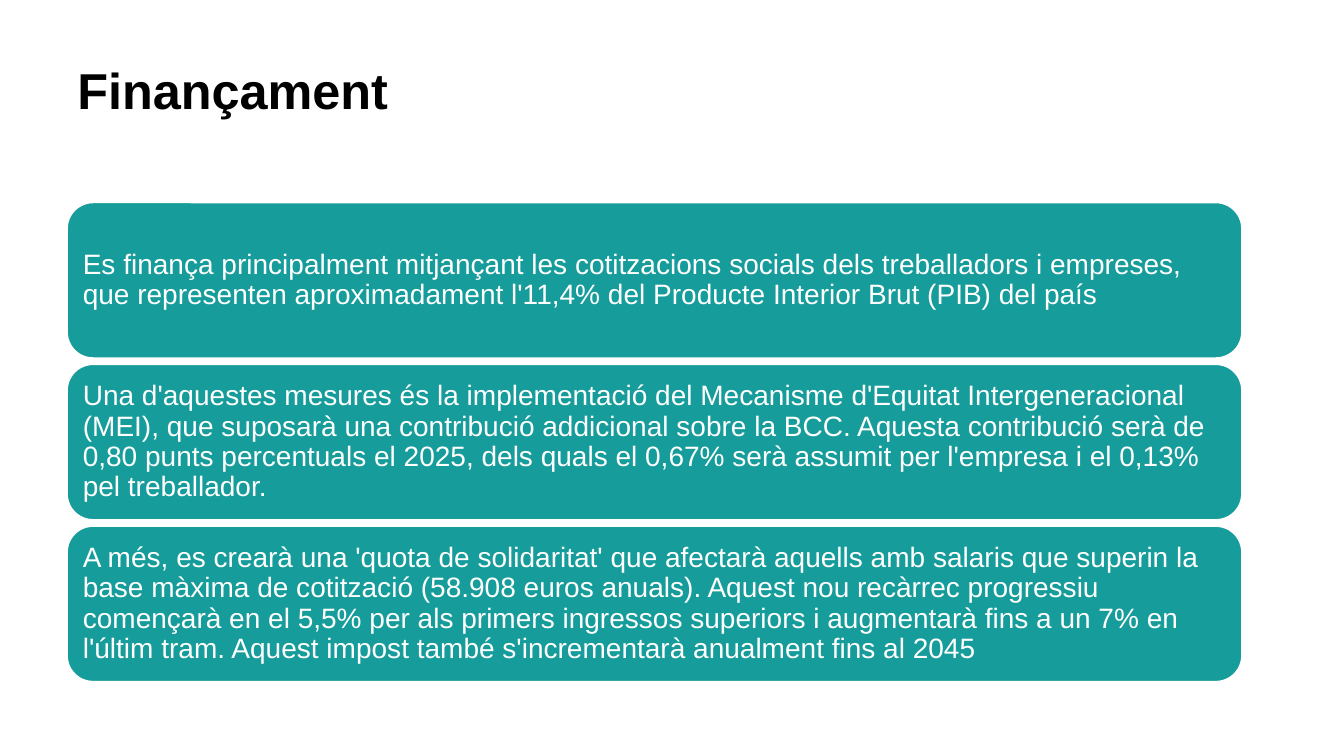
from pptx import Presentation
from pptx.dml.color import RGBColor
from pptx.enum.shapes import MSO_SHAPE
from pptx.enum.text import MSO_ANCHOR, MSO_AUTO_SIZE, PP_ALIGN
from pptx.util import Inches, Pt

TEAL = RGBColor(0x16, 0x9C, 0x9A)
WHITE = RGBColor(0xFF, 0xFF, 0xFF)
BLACK = RGBColor(0x00, 0x00, 0x00)

LEFT, WIDTH = 1, 17.48
TITLE_TOP, TITLE_HEIGHT = 1.6, 3.31
CARD_TOP, CARD_HEIGHT, CARD_PITCH = 5.36, 4.11, 4.28

MEASURES = [
    "Es finança principalment mitjançant les cotitzacions socials dels treballadors i empreses, "
    "que representen aproximadament l'11,4% del Producte Interior Brut (PIB) del país",
    "Una d'aquestes mesures és la implementació del Mecanisme d'Equitat Intergeneracional (MEI), "
    "que suposarà una contribució addicional sobre la BCC. Aquesta contribució serà de 0,80 punts "
    "percentuals el 2025, dels quals el 0,67% serà assumit per l'empresa i el 0,13% pel treballador.",
    "A més, es crearà una 'quota de solidaritat' que afectarà aquells amb salaris que superin la "
    "base màxima de cotització (58.908 euros anuals). Aquest nou recàrrec progressiu començarà en "
    "el 5,5% per als primers ingressos superiors i augmentarà fins a un 7% en l'últim tram. "
    "Aquest impost també s'incrementarà anualment fins al 2045",
]


def apply(target, values):
    for name, value in values.items():
        setattr(target, name, value)


class Deck:
    divisions = 20
    title_font = {"name": "Arial", "size": Pt(36), "bold": True}
    card_font = {"name": "Arial", "size": Pt(20), "bold": False}
    paragraph = {"alignment": PP_ALIGN.LEFT, "line_spacing": 0.9}
    frame = {"word_wrap": True, "auto_size": MSO_AUTO_SIZE.NONE}
    card_insets = {f"margin_{side}": Inches(0.08) for side in ("left", "top", "right", "bottom")}

    def __init__(self):
        self.prs = Presentation()
        apply(self.prs, {"slide_width": Inches(13.33), "slide_height": Inches(7.5)})
        self.s = self.prs.slides.add_slide(self.prs.slide_layouts[5])

    def box(self, column, row, columns, rows):
        unit_x = self.prs.slide_width / self.divisions
        unit_y = self.prs.slide_height / self.divisions
        return [round(v) for v in (column * unit_x, row * unit_y, columns * unit_x, rows * unit_y)]

    def set_text(self, sp, text, font, color, frame):
        tf = sp.text_frame
        apply(tf, self.frame | frame)
        p = tf.paragraphs[0]
        apply(p, self.paragraph)
        r = p.add_run()
        r.text = text
        apply(r.font, font)
        r.font.color.rgb = color

    def title(self, text, *cells):
        sp = self.s.shapes.title
        apply(sp, dict(zip(("left", "top", "width", "height"), self.box(*cells))))
        self.set_text(sp, text, self.title_font, BLACK, {"vertical_anchor": MSO_ANCHOR.TOP})

    def card(self, text, *cells):
        sp = self.s.shapes.add_shape(MSO_SHAPE.ROUNDED_RECTANGLE, *self.box(*cells))
        sp.shadow.inherit = False
        sp.fill.solid()
        sp.fill.fore_color.rgb = TEAL
        sp.line.color.rgb = WHITE
        sp.line.width = Pt(1)
        self.set_text(sp, text, self.card_font, WHITE,
                      self.card_insets | {"vertical_anchor": MSO_ANCHOR.MIDDLE})


def main():
    deck = Deck()
    deck.title("Finançament", LEFT, TITLE_TOP, WIDTH, TITLE_HEIGHT)
    for i, measure in enumerate(MEASURES):
        deck.card(measure, LEFT, CARD_TOP + i * CARD_PITCH, WIDTH, CARD_HEIGHT)
    deck.prs.save("out.pptx")


if __name__ == "__main__":
    main()
